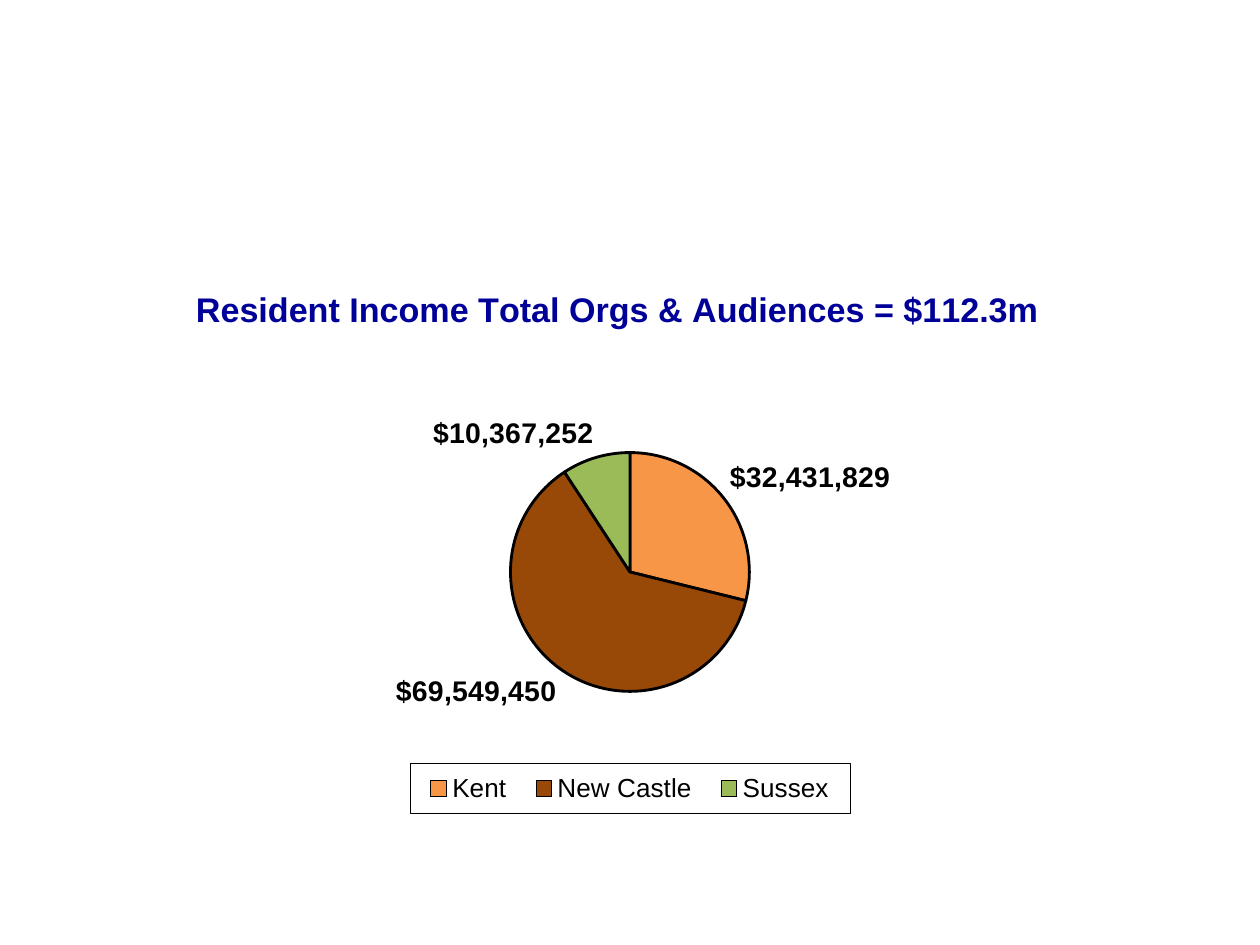
from lxml.etree import SubElement
from pptx import Presentation
from pptx.chart.data import CategoryChartData
from pptx.dml.color import RGBColor
from pptx.enum.chart import XL_CHART_TYPE, XL_LABEL_POSITION, XL_LEGEND_POSITION
from pptx.oxml import parse_xml
from pptx.oxml.ns import nsdecls, qn
from pptx.util import Inches, Pt

FONT = "Arial"
COLORS = {
    "title": "000099",
    "text": "000000",
    "line": "000000",
    "Kent": "F79646",
    "New Castle": "984807",
    "Sussex": "9BBB59",
}
INCOME = {"Kent": 32431829, "New Castle": 69549450, "Sussex": 10367252}


def rgb(name):
    return RGBColor.from_string(COLORS[name])


def set_font(font, size, color="text", bold=False):
    font.name = FONT
    font.size = Pt(size)
    font.bold = bold
    font.color.rgb = rgb(color)


def place(element, after, x, y, w=None, h=None, inner=False):
    """Give a chart part a manual layout, as fractions of the chart."""
    for old in element.findall(qn("c:layout")):
        element.remove(old)
    layout = parse_xml(f"<c:layout {nsdecls('c')}/>")
    manual = SubElement(layout, qn("c:manualLayout"))
    settings = [("layoutTarget", "inner" if inner else None),
                ("xMode", "edge"), ("yMode", "edge"),
                ("x", x), ("y", y), ("w", w), ("h", h)]
    for tag, value in settings:
        if value is not None:
            SubElement(manual, qn(f"c:{tag}")).set("val", str(value))
    previous = element.find(qn(after)) if after else None
    if previous is None:
        element.insert(0, layout)
    else:
        previous.addnext(layout)


def add_title(chart, text):
    chart.has_title = True
    title = chart.chart_title
    title.include_in_layout = False
    p = title.text_frame.paragraphs[0]
    r = p.add_run()
    r.text = text
    set_font(r.font, 19.5, "title", bold=True)
    place(title._element, "c:tx", 0.28, 0.04)


def add_legend(chart):
    chart.has_legend = True
    legend = chart.legend
    legend.position = XL_LEGEND_POSITION.RIGHT
    legend.include_in_layout = False
    set_font(legend.font, 14.9)
    place(legend._element, "c:legendPos", 0.39, 0.91, 0.22, 0.09)
    # Thin frame on a white ground
    frame = parse_xml(
        f'<c:spPr {nsdecls("c", "a")}><a:solidFill><a:srgbClr val="FFFFFF"/></a:solidFill>'
        f'<a:ln w="3175"><a:solidFill><a:srgbClr val="{COLORS["line"]}"/></a:solidFill></a:ln>'
        "</c:spPr>")
    legend._element.find(qn("c:txPr")).addprevious(frame)


def format_pie(chart):
    plot = chart.plots[0]
    plot.vary_by_categories = True
    place(chart._chartSpace.chart.plotArea, None, 0.44, 0.35, 0.12, 0.43, inner=True)

    # Slices
    for i, county in enumerate(INCOME):
        fmt = plot.series[0].points[i].format
        fmt.fill.solid()
        fmt.fill.fore_color.rgb = rgb(county)
        fmt.line.color.rgb = rgb("line")
        fmt.line.width = Pt(1.62)

    # Value labels
    plot.has_data_labels = True
    labels = plot.data_labels
    labels.show_value = True
    labels.show_percentage = False
    labels.number_format = '"$"#,##0'
    labels.number_format_is_linked = False
    labels.position = XL_LABEL_POSITION.OUTSIDE_END
    set_font(labels.font, 16.2, bold=True)


def add_income_chart(s):
    data = CategoryChartData()
    data.categories = list(INCOME)
    data.add_series("Series 1", list(INCOME.values()))
    chart = s.shapes.add_chart(XL_CHART_TYPE.PIE, Inches(-2.94), Inches(2.05),
                               Inches(15.88), Inches(4.41), data).chart
    set_font(chart.font, 16.2)
    add_title(chart, "Resident Income Total Orgs & Audiences = $112.3m")
    add_legend(chart)
    format_pie(chart)


def main():
    prs = Presentation()
    prs.slide_width, prs.slide_height = Inches(10), Inches(7.5)
    s = prs.slides.add_slide(prs.slide_layouts[6])
    add_income_chart(s)
    prs.save("out.pptx")


if __name__ == "__main__":
    main()
